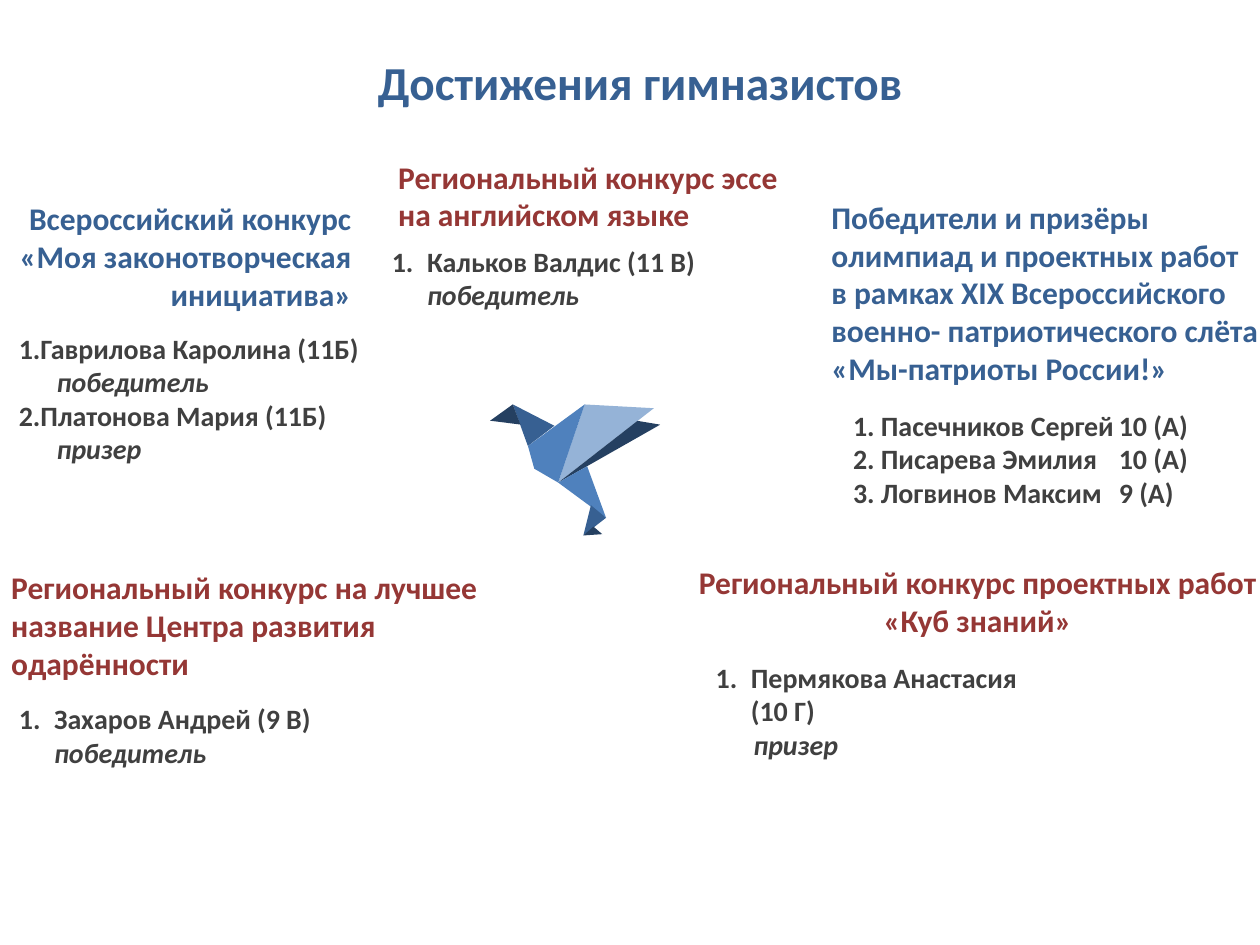
from dataclasses import dataclass

from lxml import etree
from pptx import Presentation
from pptx import util as u
from pptx.dml import color
from pptx.enum import text
from pptx.oxml import ns


@dataclass(frozen=True)
class Theme:
    font: str = "Calibri"
    blue: str = "376092"
    red: str = "953735"
    ink: str = "404040"
    pale: str = "95B3D7"
    mid: str = "4F81BD"
    navy: str = "254061"
    title: int = 27
    heading: int = 18
    body: int = 16


THEME = Theme()
COLUMNS, ROWS = 100, 75
DECK_WIDTH, DECK_HEIGHT = u.Inches(10), u.Inches(7.5)
HANG, STEP, TAB = 2.8, 3, 21.1
LEFT, CENTER, RIGHT = text.PP_ALIGN.LEFT, text.PP_ALIGN.CENTER, text.PP_ALIGN.RIGHT
TOP, BOTTOM = text.MSO_ANCHOR.TOP, text.MSO_ANCHOR.BOTTOM

TITLE = ("Достижения гимназистов", (6.2, 4.2, 89.2, 9.3))

HEADINGS = [
    (["Всероссийский конкурс «Моя законотворческая инициатива»"],
     (0.3, 15.2, 27.6, 10.1), THEME.blue, RIGHT, BOTTOM, 0),
    (["Региональный конкурс эссе на английском языке"],
     (31.6, 11.9, 32.1, 7.1), THEME.red, LEFT, BOTTOM, 0),
    (["Победители и призёры олимпиад и проектных работ в рамках XIX Всероссийского",
      "военно- патриотического слёта «Мы-патриоты России!»"],
     (65, 15.2, 36, 16.2), THEME.blue, LEFT, TOP, 1),
    (["Региональный конкурс на лучшее название Центра развития одарённости"],
     (-0.1, 44.6, 40.8, 13.1), THEME.red, LEFT, TOP, 1),
    (["Региональный конкурс проектных работ", "«Куб знаний»"],
     (51.9, 44.2, 51.4, 7.1), THEME.red, CENTER, TOP, 1),
]

WINNERS = [
    ((1.5, 25.8, 28.4, 11.8), [
        ("plain", "1.Гаврилова Каролина (11Б)", ""),
        ("award", "", "победитель"),
        ("plain", "2.Платонова Мария (11Б)", ""),
        ("award", "", "призер")]),
    ((31.1, 18.9, 25.7, 9.1), [
        ("numbered", "Кальков Валдис (11 В) ", "победитель")]),
    ((67.7, 31.9, 31.1, 11.8), [
        ("tabbed", "1. Пасечников Сергей\t10 (А)", ""),
        ("tabbed", "2. Писарева Эмилия\t10 (А)", ""),
        ("tabbed", "3. Логвинов Максим\t9 (А)", "")]),
    ((1.5, 55.2, 25.7, 9.1), [
        ("numbered", "Захаров Андрей (9 В) ", "победитель")]),
    ((56.8, 51.9, 25.7, 11.8), [
        ("numbered", "Пермякова Анастасия (10 Г)", ""),
        ("award", "", "призер")]),
]

BIRD_POINTS = {
    "back": (46.4, 32.1), "wing": (51.9, 32.4), "belly": (44.3, 38.3),
    "neck": (41.9, 35.4), "chest": (42.4, 37.2), "crown": (40.7, 32.1),
    "nape": (44, 33.8), "beak": (38.9, 33.4), "throat": (41.3, 33.7),
    "far wing": (52.4, 33.7), "wing fold": (50.6, 33.4), "hip": (46.6, 37),
    "tail": (48.1, 41.1), "tail tip": (46.3, 42.5), "tail root": (46.9, 40.1),
    "tail end": (47.8, 42.4), "tail fold": (47.1, 41.8),
}
BIRD_FACETS = [
    (THEME.pale, ["back", "wing", "belly"]),
    (THEME.mid, ["neck", "back", "belly", "chest"]),
    (THEME.blue, ["crown", "nape", "neck"]),
    (THEME.navy, ["beak", "crown", "throat"]),
    (THEME.navy, ["far wing", "wing fold", "belly"]),
    (THEME.mid, ["tail", "hip", "belly"]),
    (THEME.blue, ["tail tip", "tail root", "tail"]),
    (THEME.navy, ["tail end", "tail fold", "tail tip"]),
]


def across(columns):
    return u.Emu(round(columns * DECK_WIDTH / COLUMNS))


def down(rows):
    return u.Emu(round(rows * DECK_HEIGHT / ROWS))


def add_box(page, area, anchor=TOP, side=0, edge=0.5):
    left, top, width, height = area
    box = page.shapes.add_textbox(across(left), down(top), across(width), down(height))
    frame = box.text_frame
    frame.word_wrap = True
    frame.vertical_anchor = anchor
    frame.margin_left = frame.margin_right = across(side)
    frame.margin_top = frame.margin_bottom = down(edge)
    return frame


def paragraph_at(frame, index):
    return frame.add_paragraph() if index else frame.paragraphs[0]


def style(span, size, shade, italic=False):
    font = span.font
    font.name, font.size = THEME.font, u.Pt(size)
    font.bold, font.italic = True, italic
    font.color.rgb = color.RGBColor.from_string(shade)


def set_layout(para, kind):
    props = para._p.get_or_add_pPr()
    if kind == "numbered":
        props.set("marL", str(across(HANG)))
        props.set("indent", str(-across(HANG)))
        etree.SubElement(props, ns.qn("a:buFont"), typeface="+mj-lt")
        etree.SubElement(props, ns.qn("a:buAutoNum"), type="arabicPeriod")
    elif kind == "award":
        props.set("marL", str(across(STEP)))
        props.set("indent", "0")
    elif kind == "tabbed":
        stops = etree.SubElement(props, ns.qn("a:tabLst"))
        etree.SubElement(stops, ns.qn("a:tab"), pos=str(across(TAB)), algn="l")


def add_heading(page, lines, area, shade, align, anchor, side, size=THEME.heading, edge=0.5):
    frame = add_box(page, area, anchor, side, edge)
    for index, line in enumerate(lines):
        para = paragraph_at(frame, index)
        para.text = line
        para.alignment = align
        style(para.runs[0], size, shade)


def add_winners(page, area, entries):
    frame = add_box(page, area)
    for index, (kind, name, award) in enumerate(entries):
        para = paragraph_at(frame, index)
        set_layout(para, kind)
        for words, italic in ((name, False), (award, True)):
            if words:
                span = para.add_run()
                span.text = words
                style(span, THEME.body, THEME.ink, italic)


def add_bird(page):
    bird = page.shapes.add_group_shape()
    for shade, corners in BIRD_FACETS:
        start, *others = [(across(x), down(y)) for x, y in map(BIRD_POINTS.get, corners)]
        builder = bird.shapes.build_freeform(*start)
        builder.add_line_segments(others, close=True)
        facet = builder.convert_to_shape()
        facet.shadow.inherit = False
        facet.fill.solid()
        facet.fill.fore_color.rgb = color.RGBColor.from_string(shade)
        facet.line.fill.background()


def main():
    deck = Presentation()
    deck.slide_width, deck.slide_height = DECK_WIDTH, DECK_HEIGHT
    page = deck.slides.add_slide(deck.slide_layouts[6])
    title, area = TITLE
    add_heading(page, [title], area, THEME.blue, CENTER, TOP, 0, THEME.title, 0)
    for heading in HEADINGS:
        add_heading(page, *heading)
    for winners in WINNERS:
        add_winners(page, *winners)
    add_bird(page)
    deck.save("out.pptx")


if __name__ == "__main__":
    main()
